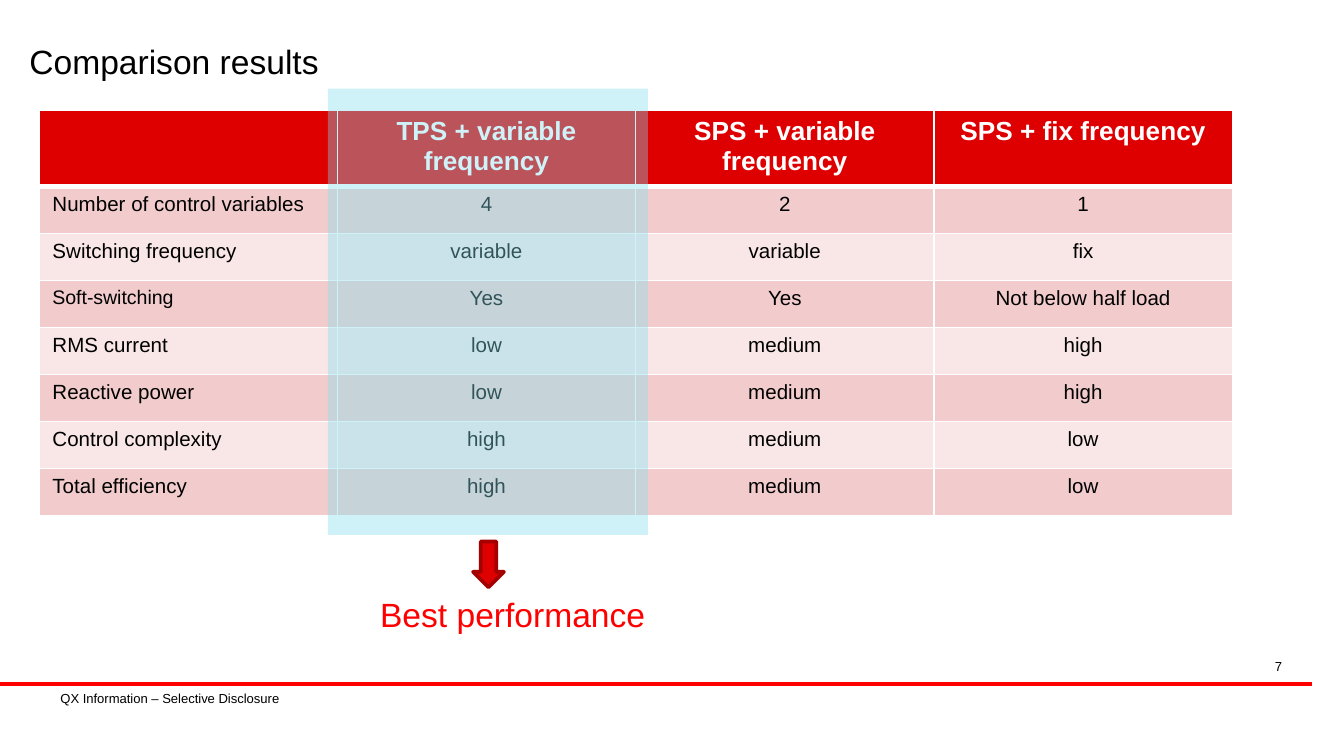
from lxml.etree import SubElement
from pptx import Presentation
from pptx.dml.color import RGBColor
from pptx.enum.shapes import MSO_CONNECTOR, MSO_SHAPE
from pptx.enum.text import PP_ALIGN
from pptx.oxml.ns import qn
from pptx.util import Emu, Pt

PX = 4572  # EMU per px, 200 px to the inch
FONT = "Arial"
COLORS = {
    "black": "000000",
    "white": "FFFFFF",
    "red": "FF0000",
    "header": "DE0000",
    "outline": "A40000",
    "band_dark": "F2CCCC",
    "band_light": "F9E7E7",
    "highlight": "80DFEF",
}
HEADER = ["", "TPS + variable frequency", "SPS + variable frequency", "SPS + fix frequency"]
ROWS = [
    ["Number of control variables", "4", "2", "1"],
    ["Switching frequency", "variable", "variable", "fix"],
    ["Soft-switching", "Yes", "Yes", "Not below half load"],
    ["RMS current", "low", "medium", "high"],
    ["Reactive power", "low", "medium", "high"],
    ["Control complexity", "high", "medium", "low"],
    ["Total efficiency", "high", "medium", "low"],
]


def px(*values):
    return [Emu(value * PX) for value in values]


def color(name):
    return RGBColor.from_string(COLORS[name])


def add_span(para, text, size, color_name, bold=False):
    span = para.add_run()
    span.text = text
    span.font.name = FONT
    span.font.size = Pt(size)
    span.font.bold = bold
    span.font.color.rgb = color(color_name)


def add_text(page, box, text, size, color_name="black", align=PP_ALIGN.LEFT,
             insets=(20, 10), wrap=True):
    frame = page.shapes.add_textbox(*px(*box)).text_frame
    frame.word_wrap = wrap
    frame.margin_left = frame.margin_right = Emu(insets[0] * PX)
    frame.margin_top = frame.margin_bottom = Emu(insets[1] * PX)
    para = frame.paragraphs[0]
    para.alignment = align
    add_span(para, text, size, color_name)


def add_block(page, kind, box, fill):
    block = page.shapes.add_shape(kind, *px(*box))
    block.shadow.inherit = False
    block.fill.solid()
    block.fill.fore_color.rgb = color(fill)
    return block


def set_borders(cell, widths):
    properties = cell._tc.get_or_add_tcPr()
    for side, width in widths.items():
        line = SubElement(properties, qn(f"a:ln{side}"), w=str(Pt(width)))
        fill = SubElement(line, qn("a:solidFill"))
        SubElement(fill, qn("a:srgbClr"), val=COLORS["white"])


def add_comparison(page, box):
    left, top, width, height = box
    row_height, columns = 70, len(HEADER)
    header_height = height - row_height * len(ROWS)
    table = page.shapes.add_table(len(ROWS) + 1, columns, *px(*box)).table
    for column in table.columns:
        column.width = Emu(width // columns * PX)
    for row_index, texts in enumerate([HEADER] + ROWS):
        is_header = row_index == 0
        table.rows[row_index].height = Emu((header_height if is_header else row_height) * PX)
        band = "header" if is_header else "band_dark" if row_index % 2 else "band_light"
        for column_index, text in enumerate(texts):
            cell = table.cell(row_index, column_index)
            set_borders(cell, {"L": 1, "R": 1, "T": 3 if row_index == 1 else 1,
                               "B": 3 if is_header else 1})
            cell.fill.solid()
            cell.fill.fore_color.rgb = color(band)
            para = cell.text_frame.paragraphs[0]
            para.alignment = PP_ALIGN.CENTER if column_index else PP_ALIGN.LEFT
            if is_header and text:
                add_span(para, text, 14, "white", bold=True)
            elif text:
                add_span(para, text, 10.5 if text == "Soft-switching" else 11, "black")


def add_verdict(page, box):
    left, top, width, height = box
    # Translucent highlight over the best column
    highlight = add_block(page, MSO_SHAPE.RECTANGLE, (left, top, width, 664), "highlight")
    highlight.line.fill.background()
    tint = highlight.fill._xPr.find(qn("a:solidFill"))[0]
    SubElement(tint, qn("a:alpha"), val="38000")
    # Arrow down to the conclusion
    arrow = add_block(page, MSO_SHAPE.DOWN_ARROW, (left + 216, top + 674, 46, 68), "header")
    arrow.line.color.rgb = color("outline")
    arrow.line.width = Pt(2)
    add_text(page, (left + 58, top + height - 80, 520, 80), "Best performance", 18, "red")


def add_footer(page, box):
    left, top, width, height = box
    # Rule across the bottom
    rule = page.shapes.add_connector(MSO_CONNECTOR.STRAIGHT, *px(left, top, left + width, top))
    rule.line.color.rgb = color("red")
    rule.line.width = Pt(2.25)
    SubElement(rule._element.spPr, qn("a:effectLst"))
    # Disclosure label and page number
    add_text(page, (left + 74, top + 1, 462, height), "QX Information – Selective Disclosure",
             7, insets=(16, 8))
    add_text(page, (left + 1458, top - 46, 466, 34), "7", 7,
             align=PP_ALIGN.RIGHT, insets=(16, 8))


def main():
    deck = Presentation()
    deck.slide_width, deck.slide_height = px(2000, 1125)
    page = deck.slides.add_slide(deck.slide_layouts[6])
    add_footer(page, (0, 1018, 1952, 40))
    add_text(page, (24, 51, 476, 80), "Comparison results", 18, wrap=False)
    add_comparison(page, (58, 164, 1776, 572))
    add_verdict(page, (488, 132, 476, 822))
    deck.save("out.pptx")


if __name__ == "__main__":
    main()
